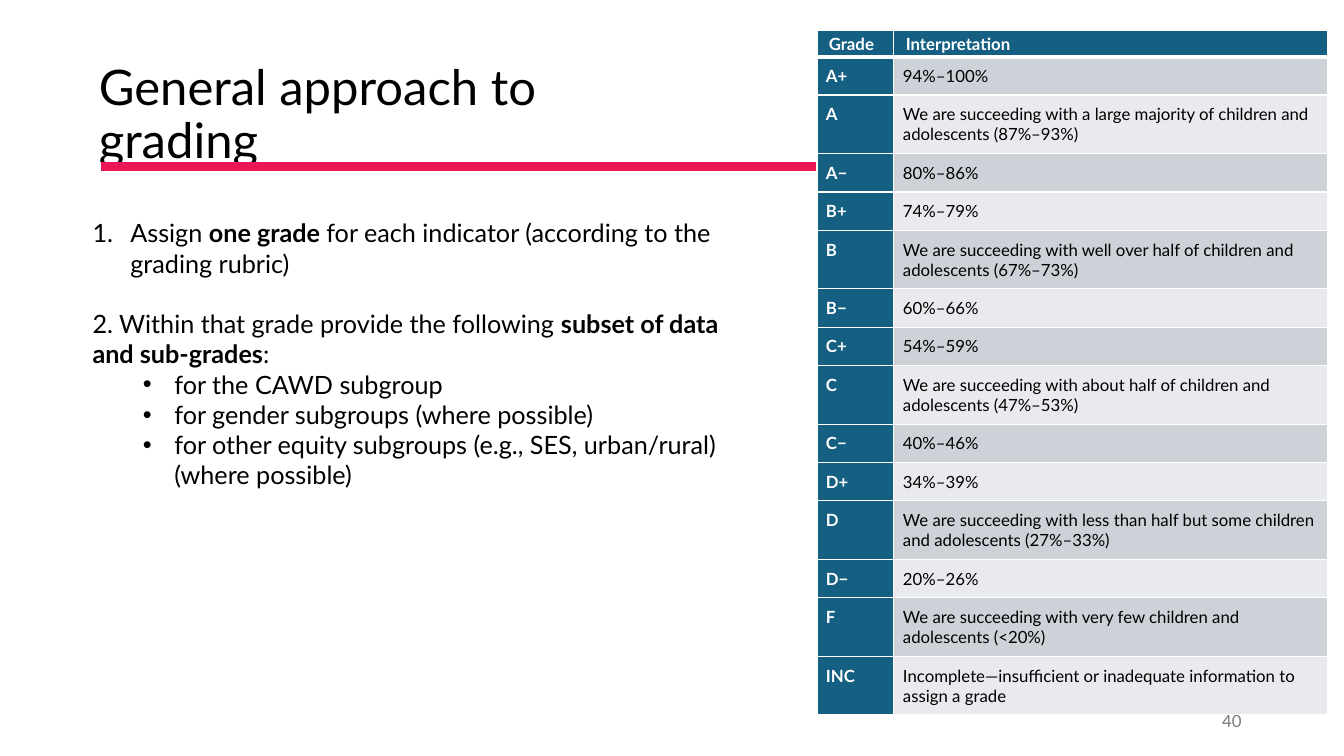
import pptx
import pptx.util
import pptx.dml.color
import pptx.enum.shapes
import pptx.enum.text
import pptx.oxml.ns
from lxml import etree

Pt = pptx.util.Pt
ALIGN = pptx.enum.text.PP_ALIGN
ANCHOR = pptx.enum.text.MSO_ANCHOR
COLORS = {
    "text": "000000",
    "white": "FFFFFF",
    "muted": "797979",
    "accent": "EA1656",
    "head": "156082",
    "dark_band": "CCD2D8",
    "light_band": "E8EAED",
}
GRADES = [
    ("A+", "94%–100%"),
    ("A", "We are succeeding with a large majority of children and adolescents (87%–93%)"),
    ("A−", "80%–86%"),
    ("B+", "74%–79%"),
    ("B", "We are succeeding with well over half of children and adolescents (67%–73%)"),
    ("B−", "60%–66%"),
    ("C+", "54%–59%"),
    ("C", "We are succeeding with about half of children and adolescents (47%–53%)"),
    ("C−", "40%–46%"),
    ("D+", "34%–39%"),
    ("D", "We are succeeding with less than half but some children and adolescents (27%–33%)"),
    ("D−", "20%–26%"),
    ("F", "We are succeeding with very few children and adolescents (<20%)"),
    ("INC", "Incomplete—insufficient or inadequate information to assign a grade"),
]


def rgb(name):
    return pptx.dml.color.RGBColor.from_string(COLORS[name])


def add_xml(parent, tag, **attrs):
    return etree.SubElement(parent, pptx.oxml.ns.qn(tag), **attrs)


class Deck:
    font = "Lato"

    def __init__(self, prs):
        self.s = prs.slides.add_slide(prs.slide_layouts[6])

    def run(self, p, text, size, color="text", bold=False):
        """Add one run; a line break in the text becomes a:br."""
        for i, part in enumerate(text.split("\n")):
            if i:
                p.add_line_break()
            r = p.add_run()
            r.text = part
            r.font.name, r.font.size, r.font.bold = self.font, Pt(size), bold
            r.font.color.rgb = rgb(color)

    def box(self, x, y, w, h, anchor=ANCHOR.TOP):
        tf = self.s.shapes.add_textbox(Pt(x), Pt(y), Pt(w), Pt(h)).text_frame
        tf.word_wrap = True
        tf.vertical_anchor = anchor
        return tf

    def label(self, x, y, w, h, text, size, color="text", align=ALIGN.LEFT, spacing=1.0):
        p = self.box(x, y, w, h, ANCHOR.MIDDLE).paragraphs[0]
        p.alignment, p.line_spacing = align, spacing
        self.run(p, text, size, color)

    def outline(self, x, y, w, h, items, size):
        """Each item: list style (number, bullet or None), space before, runs."""
        tf = self.box(x, y, w, h)
        for i, (style, before, runs) in enumerate(items):
            p = tf.add_paragraph() if i else tf.paragraphs[0]
            pPr = p._p.get_or_add_pPr()
            if style == "number":
                pPr.set("marL", str(Pt(27)))
                pPr.set("indent", str(Pt(-27)))
                add_xml(pPr, "a:buFont", typeface="+mj-lt")
                add_xml(pPr, "a:buAutoNum", type="arabicPeriod")
            elif style == "bullet":
                p.level = 1
                pPr.set("marL", str(Pt(58.5)))
                pPr.set("indent", str(Pt(-22.5)))
                add_xml(pPr, "a:buFont", typeface="Arial")
                add_xml(pPr, "a:buChar", char="•")
            if before:
                p.space_before = Pt(before)
            for text, bold in runs:
                self.run(p, text, size, bold=bold)

    def rule(self, x1, x2, y, width, color):
        line = self.s.shapes.add_connector(
            pptx.enum.shapes.MSO_CONNECTOR.STRAIGHT, Pt(x1), Pt(y), Pt(x2), Pt(y))
        line.line.color.rgb, line.line.width = rgb(color), Pt(width)
        add_xml(line._element.spPr, "a:effectLst")

    def cell(self, cell, text, fill, color, bold, margins, borders, align=ALIGN.LEFT):
        tcPr = cell._tc.get_or_add_tcPr()
        for side, width in zip("LRTB", borders):
            ln = add_xml(tcPr, "a:ln" + side, w=str(Pt(width)))
            add_xml(add_xml(ln, "a:solidFill"), "a:srgbClr", val=COLORS["white"])
        cell.fill.solid()
        cell.fill.fore_color.rgb = rgb(fill)
        cell.margin_left = cell.margin_right = Pt(margins[0])
        cell.margin_top = cell.margin_bottom = Pt(margins[1])
        p = cell.text_frame.paragraphs[0]
        p.alignment = align
        self.run(p, text, 12, color, bold)

    def grade_table(self, x, y, widths, header, grades):
        heights = [18.7] + [41 if len(text) > 20 else 26 for _, text in grades]
        table = self.s.shapes.add_table(
            len(heights), len(widths), Pt(x), Pt(y), Pt(sum(widths)), Pt(sum(heights))).table
        for col, width in zip(table.columns, widths):
            col.width = Pt(width)
        for row, height in zip(table.rows, heights):
            row.height = Pt(height)
        # Header row
        for c, (text, align) in enumerate(header):
            cell = table.cell(0, c)
            cell.vertical_anchor = ANCHOR.MIDDLE
            self.cell(cell, text, "head", "white", True, (8.5, 2), (1, 1, 1, 3), align)
        # Grade rows with alternating bands
        for i, (grade, text) in enumerate(grades, 1):
            band = "dark_band" if i % 2 else "light_band"
            borders = (1, 1, 3 if i == 1 else 1, 1)
            self.cell(table.cell(i, 0), grade, "head", "white", True, (6.5, 6.5), borders)
            self.cell(table.cell(i, 1), text, band, "text", False, (6.5, 6.5), borders)


def main():
    prs = pptx.Presentation()
    prs.slide_width, prs.slide_height = Pt(960), Pt(540)
    deck = Deck(prs)

    # Title, slide number and rule
    deck.label(63.5, 31, 828, 104.5, "General approach to\ngrading", 35, spacing=0.9)
    deck.label(678, 500.5, 216, 28.8, "40", 12, "muted", ALIGN.RIGHT)
    deck.rule(72, 639, 119, 6, "accent")

    # Grading steps
    deck.outline(59, 152, 495, 204, [
        ("number", 0, [("Assign ", False), ("one grade ", True),
                       ("for each indicator (according to the grading rubric)", False)]),
        (None, 21.6, [("2. Within that grade provide the following ", False),
                      ("subset of data and sub-grades", True), (":", False)]),
        ("bullet", 0, [("for the CAWD subgroup", False)]),
        ("bullet", 0, [("for gender subgroups (where possible)", False)]),
        ("bullet", 0, [("for other equity subgroups (e.g., SES, urban/rural)\n(where possible)",
                        False)]),
    ], 18)

    # Grade table
    deck.grade_table(583.5, 21.8, (55, 309.5),
                     [("Grade", ALIGN.LEFT), ("Interpretation", ALIGN.JUSTIFY)], GRADES)

    prs.save("out.pptx")


if __name__ == "__main__":
    main()
